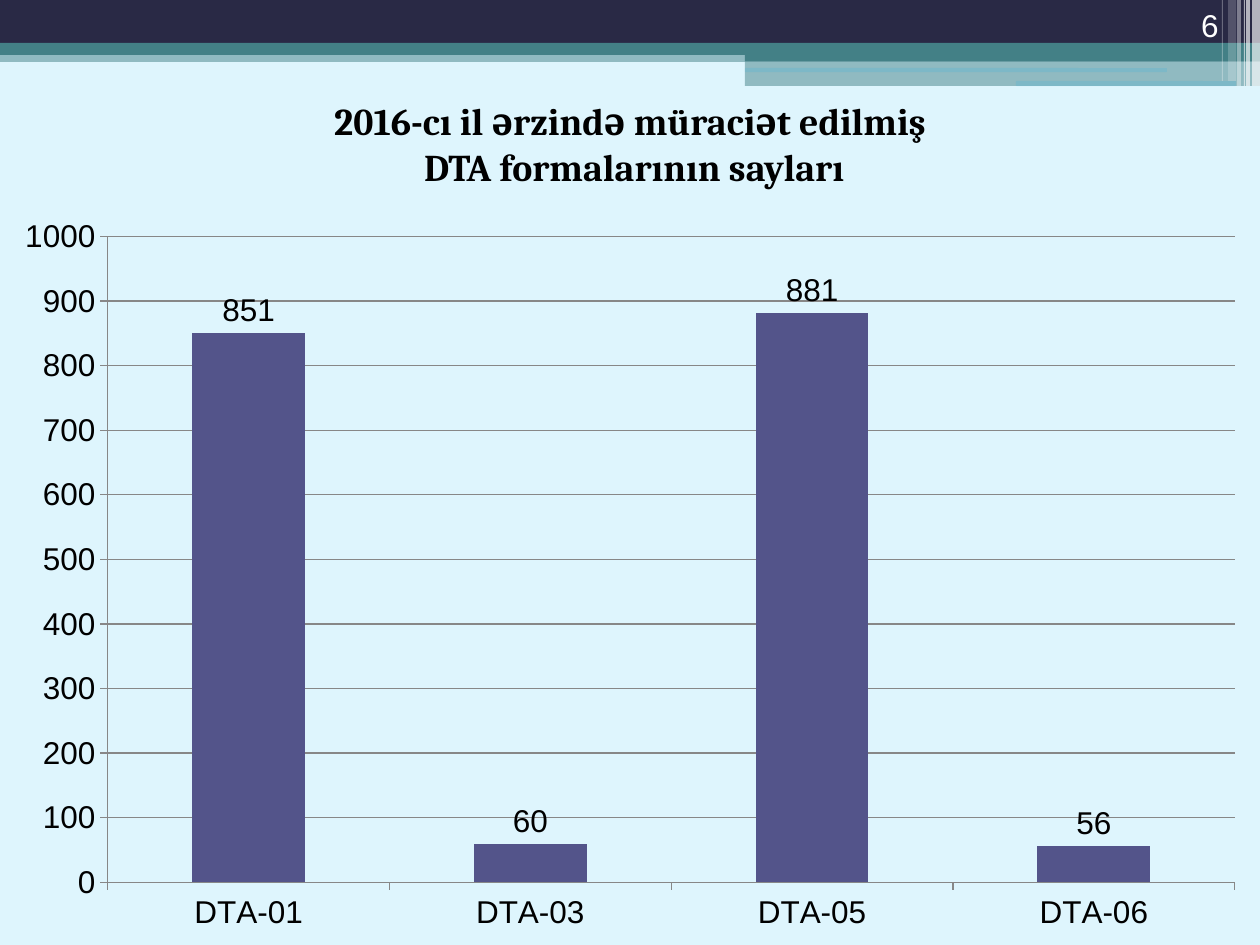
from lxml import etree
from pptx import Presentation
from pptx import util as u
from pptx.chart.data import CategoryChartData
from pptx.dml.color import RGBColor
from pptx.enum import chart as ch, shapes, text
from pptx.oxml.ns import qn

SLIDE_W, SLIDE_H = 1260, 945
NAVY, TEAL, SKY, WHITE, BLACK = "292945", "438086", "00B0F0", "FFFFFF", "000000"
BACKGROUND, BAR, AXIS = "DEF5FD", "53548A", "878787"

# left, top, width, height, colour, opacity in percent
BANDS = [
    (0, 50, 1260, 12, TEAL, 50),
    (0, 0, 1260, 43, NAVY, 100),
    (0, 43, 1260, 12, TEAL, 100),
    (745, 49, 515, 12, TEAL, 100),
    (745, 61, 515, 25, TEAL, 50),
]
ACCENTS = [(745, 68, 422, 4, SKY, 13), (1016, 81, 220, 5, SKY, 13)]
# left, width, height, opacity in percent
EDGE_STRIPES = [
    (1252, 8, 86, 65), (1246, 4, 86, 65), (1244, 1, 86, 60),
    (1237, 4, 86, 40), (1228, 8, 81, 20), (1222, 1, 81, 30),
]


def px(n):
    return u.Emu(round(n * 914400 / 126))


def rgb(value):
    return RGBColor.from_string(value)


def place(item, left, top, width, height):
    item.left, item.top = px(left), px(top)
    item.width, item.height = px(width), px(height)


def style_font(font, size, name, color, bold=False):
    font.size, font.name, font.bold = u.Pt(size), name, bold
    font.color.rgb = rgb(color)


def add_bar(slide, left, top, width, height, color, opacity,
            kind=shapes.MSO_SHAPE.RECTANGLE):
    bar = slide.shapes.add_shape(kind, px(left), px(top), px(width), px(height))
    bar.shadow.inherit = False
    bar.line.fill.background()
    bar.fill.solid()
    bar.fill.fore_color.rgb = rgb(color)
    if opacity < 100:
        srgb = bar.fill._xPr.find(".//" + qn("a:srgbClr"))
        etree.SubElement(srgb, qn("a:alpha"), val=str(opacity * 1000))


def add_header(slide):
    for band in BANDS:
        add_bar(slide, *band)
    for accent in ACCENTS:
        add_bar(slide, *accent, kind=shapes.MSO_SHAPE.ROUNDED_RECTANGLE)
    for left, width, height, opacity in EDGE_STRIPES:
        add_bar(slide, left, 0, width, height, WHITE, opacity)


def add_page_number(slide, number):
    box = slide.shapes.add_textbox(px(1126), 0, px(105), px(50))
    frame = box.text_frame
    frame.word_wrap = True
    frame.vertical_anchor = text.MSO_ANCHOR.BOTTOM
    paragraph = frame.paragraphs[0]
    paragraph.alignment = text.PP_ALIGN.RIGHT
    run = paragraph.add_run()
    run.text = number
    style_font(run.font, 18, "Arial", WHITE)


def set_title(slide, lines):
    title = slide.shapes.title
    place(title, 0, 91, SLIDE_W, 105)
    frame = title.text_frame
    frame.word_wrap = True
    frame.auto_size = text.MSO_AUTO_SIZE.NONE
    for i, line in enumerate(lines):
        paragraph = frame.add_paragraph() if i else frame.paragraphs[0]
        paragraph.alignment = text.PP_ALIGN.CENTER
        run = paragraph.add_run()
        run.text = line
        style_font(run.font, 21.6, "Cambria", BLACK, bold=True)


def style_axis(axis):
    axis.major_tick_mark = ch.XL_TICK_MARK.OUTSIDE
    axis.minor_tick_mark = ch.XL_TICK_MARK.NONE
    axis.format.line.color.rgb = rgb(AXIS)
    style_font(axis.tick_labels.font, 18, "Arial", BLACK)


def add_form_chart(slide, counts):
    data = CategoryChartData()
    data.categories = list(counts)
    data.add_series("Series 1", list(counts.values()))
    chart = slide.shapes.add_chart(
        ch.XL_CHART_TYPE.COLUMN_CLUSTERED,
        0, px(204), px(SLIDE_W), px(SLIDE_H - 204), data).chart
    chart.has_legend = chart.has_title = False
    style_font(chart.font, 18, "Cambria", BLACK)

    style_axis(chart.category_axis)
    values = chart.value_axis
    style_axis(values)
    values.minimum_scale, values.maximum_scale, values.major_unit = 0, 1000, 100
    values.has_major_gridlines = True
    values.major_gridlines.format.line.color.rgb = rgb(AXIS)

    plot = chart.plots[0]
    plot.gap_width = 150
    plot.vary_by_categories = False
    fill = plot.series[0].format.fill
    fill.solid()
    fill.fore_color.rgb = rgb(BAR)
    plot.has_data_labels = True
    labels = plot.data_labels
    labels.show_value = True
    labels.position = ch.XL_LABEL_POSITION.OUTSIDE_END
    style_font(labels.font, 18, "Arial", BLACK)


def main():
    deck = Presentation()
    deck.slide_width, deck.slide_height = px(SLIDE_W), px(SLIDE_H)
    slide = deck.slides.add_slide(deck.slide_layouts[5])
    slide.background.fill.solid()
    slide.background.fill.fore_color.rgb = rgb(BACKGROUND)
    add_header(slide)
    add_page_number(slide, "6")
    add_form_chart(slide, {"DTA-01": 851, "DTA-03": 60, "DTA-05": 881, "DTA-06": 56})
    set_title(slide, ["2016-cı il ərzində müraciət edilmiş", " DTA formalarının sayları"])
    deck.save("out.pptx")


if __name__ == "__main__":
    main()
